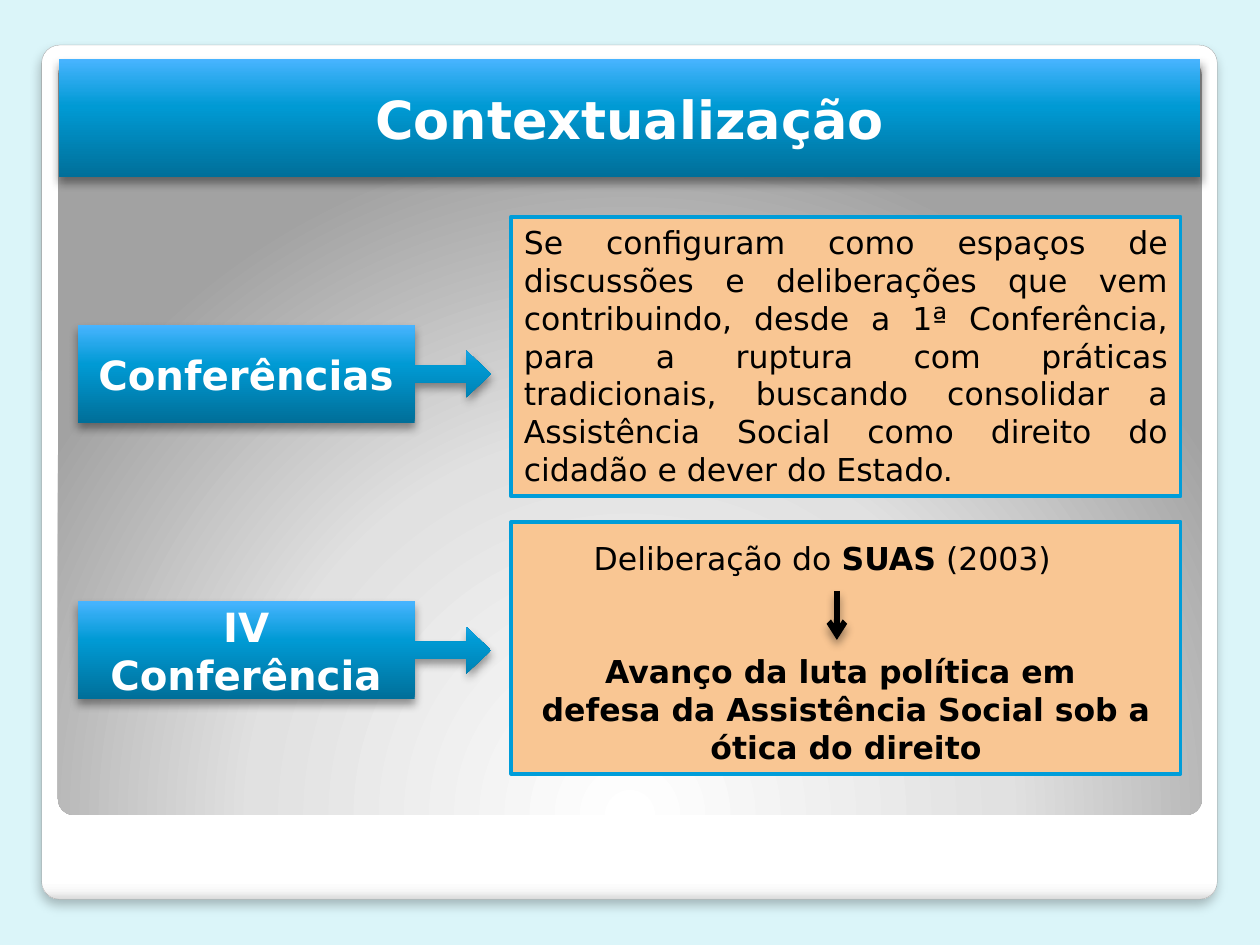
from lxml import etree
from pptx import Presentation
from pptx.dml.color import RGBColor
from pptx.enum.shapes import MSO_CONNECTOR, MSO_SHAPE
from pptx.enum.text import MSO_ANCHOR, PP_ALIGN
from pptx.oxml import parse_xml
from pptx.oxml.ns import nsdecls, qn
from pptx.util import Cm, Pt

RECTANGLE = MSO_SHAPE.RECTANGLE
ROUNDED = MSO_SHAPE.ROUNDED_RECTANGLE
CALLOUT = MSO_SHAPE.RIGHT_ARROW_CALLOUT
STRAIGHT = MSO_CONNECTOR.STRAIGHT
TOP, MIDDLE = MSO_ANCHOR.TOP, MSO_ANCHOR.MIDDLE
CENTER, JUSTIFY = PP_ALIGN.CENTER, PP_ALIGN.JUSTIFY

FONT = "DejaVu Sans"
BLUE_STOPS = [(0, "006F99"), (60, "009AD4"), (100, "48B4FF")]
FRAME_STOPS = [(0, "FFFFFF"), (98, "FFFFFF"), (99, "F7F7F7"), (100, "DADADA")]
PANEL_STOPS = [(0, "FFFFFF"), (55, "E1E1E1"), (100, "A2A2A2")]
UPWARD = '<a:lin ang="16200000" scaled="0"/>'
DOWNWARD = '<a:lin ang="5400000" scaled="0"/>'
RADIAL = ('<a:path path="circle"><a:fillToRect l="50000" t="175000" '
          'r="50000" b="-75000"/></a:path>')
SOFT_SHADOW = (25, 6, 4)
STRONG_SHADOW = (40, 5.2, 3)


def color(value):
    return RGBColor.from_string(value)


def write(paragraph, text, size=18, fill="000000", bold=False):
    run = paragraph.add_run()
    run.text = text
    run.font.name = FONT
    run.font.size = Pt(size)
    run.font.bold = bold
    run.font.color.rgb = color(fill)


def set_gradient(shape, stops, direction):
    marks = "".join(
        f'<a:gs pos="{position * 1000}"><a:srgbClr val="{value}"/></a:gs>'
        for position, value in stops)
    gradient = parse_xml(f'<a:gradFill {nsdecls("a")} rotWithShape="1">'
                         f'<a:gsLst>{marks}</a:gsLst>{direction}</a:gradFill>')
    shape.element.spPr.find(qn("a:prstGeom")).addnext(gradient)


def set_shadow(shape, shadow):
    effects = etree.SubElement(shape.element.spPr, qn("a:effectLst"))
    if shadow:
        opacity, blur, distance = shadow
        effects.append(parse_xml(
            f'<a:outerShdw {nsdecls("a")} blurRad="{Pt(blur)}" '
            f'dist="{Pt(distance)}" dir="5400000" rotWithShape="0">'
            f'<a:srgbClr val="000000"><a:alpha val="{opacity * 1000}"/>'
            '</a:srgbClr></a:outerShdw>'))


class SlideBuilder:
    def __init__(self, slide):
        self.slide = slide

    def background(self, value):
        fill = self.slide.background.fill
        fill.solid()
        fill.fore_color.rgb = color(value)

    def block(self, kind, box, line=None, width=0, adjustments=()):
        shape = self.slide.shapes.add_shape(kind, *map(Cm, box))
        for index, value in enumerate(adjustments):
            shape.adjustments[index] = value
        if line:
            shape.line.color.rgb = color(line)
            shape.line.width = Pt(width)
        else:
            shape.line.fill.background()
        return shape

    def panel(self, box, stops, direction, line=None, width=0, shadow=None):
        shape = self.block(ROUNDED, box, line, width, [0.021])
        set_gradient(shape, stops, direction)
        set_shadow(shape, shadow)

    def label(self, kind, box, text, size, adjustments=()):
        shape = self.block(kind, box, adjustments=adjustments)
        set_gradient(shape, BLUE_STOPS, UPWARD)
        set_shadow(shape, STRONG_SHADOW)
        frame = shape.text_frame
        frame.word_wrap = True
        frame.vertical_anchor = MIDDLE
        paragraph = frame.paragraphs[0]
        paragraph.alignment = CENTER
        write(paragraph, text, size=size, fill="FFFFFF", bold=True)

    def callout(self, top, text):
        self.label(CALLOUT, (1.57, top, 8.33, 1.98), text, 23,
                   [0.174, 0.235, 0.25, 0.815])

    def text_box(self, top, height, paragraphs, margin_top=0.13):
        shape = self.block(RECTANGLE, (10.31, top, 13.49, height), "009DD9", 2.25)
        shape.fill.solid()
        shape.fill.fore_color.rgb = color("F9C693")
        set_shadow(shape, None)
        frame = shape.text_frame
        frame.word_wrap = True
        frame.vertical_anchor = TOP
        frame.margin_top = Cm(margin_top)
        for index, (alignment, indent, gap, runs) in enumerate(paragraphs):
            paragraph = frame.add_paragraph() if index else frame.paragraphs[0]
            paragraph.alignment = alignment
            paragraph.space_before = Pt(gap)
            if indent:
                properties = paragraph._p.get_or_add_pPr()
                properties.set("marL", str(Cm(indent)))
            for text, bold in runs:
                write(paragraph, text, bold=bold)

    def arrow(self, x, top, bottom):
        connector = self.slide.shapes.add_connector(
            STRAIGHT, Cm(x), Cm(top), Cm(x), Cm(bottom))
        connector.line.color.rgb = color("000000")
        connector.line.width = Pt(3.35)
        outline = connector.element.spPr.find(qn("a:ln"))
        etree.SubElement(outline, qn("a:tailEnd"), type="arrow")
        set_shadow(connector, STRONG_SHADOW)


def main():
    presentation = Presentation()
    presentation.slide_width, presentation.slide_height = Cm(25.4), Cm(19.05)
    builder = SlideBuilder(
        presentation.slides.add_slide(presentation.slide_layouts[6]))

    builder.background("DBF5F9")
    builder.panel((0.84, 0.91, 23.7, 17.22), FRAME_STOPS, DOWNWARD,
                  "A4A4A4", 0.16, SOFT_SHADOW)
    builder.panel((1.17, 1.19, 23.06, 15.24), PANEL_STOPS, RADIAL)

    builder.text_box(4.37, 5.64, [
        (JUSTIFY, 0, 0, [(
            "Se configuram como espaços de discussões e deliberações que vem "
            "contribuindo, desde a 1ª Conferência, para a ruptura com práticas "
            "tradicionais, buscando consolidar a Assistência Social como "
            "direito do cidadão e dever do Estado.", False)]),
    ])
    builder.text_box(10.52, 5.08, [
        (JUSTIFY, 1.41, 0, [("Deliberação do ", False), ("SUAS", True),
                            (" (2003)", False)]),
        (CENTER, 0, 43, [("Avanço da luta política em ", True)]),
        (CENTER, 0, 0, [("defesa da Assistência Social sob a ótica do direito",
                         True)]),
    ], margin_top=0.35)

    builder.label(RECTANGLE, (1.19, 1.19, 23.01, 2.39), "Contextualização", 30)
    builder.callout(6.55, "Conferências")
    builder.callout(12.12, "IV Conferência")
    builder.arrow(16.87, 11.91, 12.9)

    presentation.save("out.pptx")


if __name__ == "__main__":
    main()
